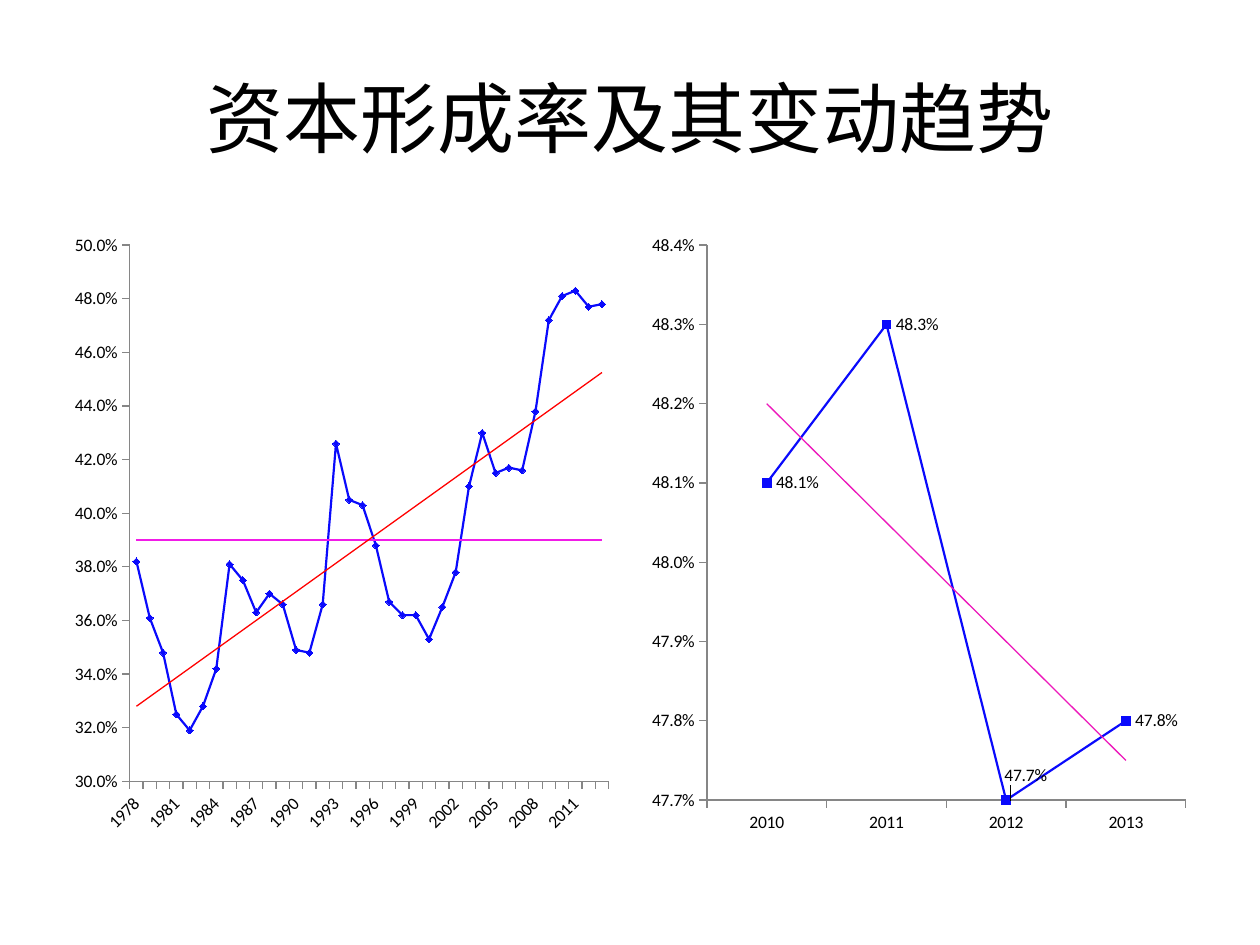
import pptx
import pptx.chart.data
import pptx.dml.color
import pptx.enum.chart
import pptx.enum.text
import pptx.oxml
import pptx.oxml.ns
import pptx.util

BLACK = pptx.dml.color.RGBColor(0x00, 0x00, 0x00)
GRAY = pptx.dml.color.RGBColor(0x86, 0x86, 0x86)
BLUE = pptx.dml.color.RGBColor(0x0A, 0x0A, 0xFC)
MAGENTA = pptx.dml.color.RGBColor(0xF1, 0x1B, 0xE7)
RED = pptx.dml.color.RGBColor(0xFF, 0x00, 0x00)
PINK = pptx.dml.color.RGBColor(0xED, 0x19, 0xBB)

FONT = "Calibri"
PERCENT = "0.0%"
MARGIN = 0.05
GUTTER = 0.016
CHART_TOP, CHART_HEIGHT = 0.233, 0.66
MARKERS = pptx.enum.chart.XL_MARKER_STYLE

FIRST_YEAR = 1978
RATES = [
    0.382, 0.361, 0.348, 0.325, 0.319, 0.328, 0.342, 0.381, 0.375,
    0.363, 0.370, 0.366, 0.349, 0.348, 0.366, 0.426, 0.405, 0.403,
    0.388, 0.367, 0.362, 0.362, 0.353, 0.365, 0.378, 0.410, 0.430,
    0.415, 0.417, 0.416, 0.438, 0.472, 0.481, 0.483, 0.477, 0.478,
]
AVERAGE = 0.39
RECENT_COUNT = 4


def xml_element(markup):
    """Parse chart markup written with the c and a prefixes."""
    tag, rest = markup.split(">", 1)
    return pptx.oxml.parse_xml(f"{tag} {pptx.oxml.ns.nsdecls('c', 'a')}>{rest}")


def manual_layout(left, top, width=None, height=None):
    """Return a layout element in shares of the chart's size."""
    parts = f'<c:x val="{left}"/><c:y val="{top}"/>'
    if width:
        parts = (
            '<c:layoutTarget val="inner"/><c:xMode val="edge"/><c:yMode val="edge"/>'
            f'{parts}<c:w val="{width}"/><c:h val="{height}"/>'
        )
    return xml_element(f"<c:layout><c:manualLayout>{parts}</c:manualLayout></c:layout>")


def add_title(slide, text):
    """Fill the title placeholder."""
    paragraph = slide.shapes.title.text_frame.paragraphs[0]
    paragraph.text = text
    paragraph.alignment = pptx.enum.text.PP_ALIGN.CENTER
    font = paragraph.runs[0].font
    font.name, font.size = FONT, pptx.util.Pt(44)
    font.color.rgb = BLACK


def format_axis(axis):
    """Give an axis a thin gray line with outside ticks and no grid."""
    axis.has_major_gridlines = False
    axis.major_tick_mark = pptx.enum.chart.XL_TICK_MARK.OUTSIDE
    axis.minor_tick_mark = pptx.enum.chart.XL_TICK_MARK.NONE
    axis.format.line.color.rgb = GRAY
    axis.format.line.width = pptx.util.Pt(0.75)


def add_line_chart(presentation, slide, column, years, series_values, scale, plot_height):
    """Add a line chart in one of two columns."""
    data = pptx.chart.data.CategoryChartData(number_format=PERCENT)
    data.categories = [str(year) for year in years]
    for number, values in enumerate(series_values, 1):
        data.add_series(f"Series {number}", values)
    share = (1 - 2 * MARGIN - GUTTER) / 2
    width, height = presentation.slide_width, presentation.slide_height
    chart = slide.shapes.add_chart(
        pptx.enum.chart.XL_CHART_TYPE.LINE_MARKERS,
        int(width * (MARGIN + column * (share + GUTTER))),
        int(height * CHART_TOP),
        int(width * share),
        int(height * CHART_HEIGHT),
        data,
    ).chart
    chart.has_legend = False
    chart.has_title = False
    chart.font.name, chart.font.size = FONT, pptx.util.Pt(10)
    chart.font.color.rgb = BLACK
    chart.plots[0].vary_by_categories = False
    format_axis(chart.category_axis)
    axis = chart.value_axis
    format_axis(axis)
    axis.minimum_scale, axis.maximum_scale, axis.major_unit = scale
    axis.tick_labels.number_format = PERCENT
    axis.tick_labels.number_format_is_linked = False
    plot_area = chart.plots[0]._element.getparent()
    for layout in plot_area.findall(pptx.oxml.ns.qn("c:layout")):
        plot_area.remove(layout)
    plot_area.insert(0, manual_layout(0.12, 0.04, 0.86, plot_height))
    return chart


def format_series(series, color, marker, marker_size=None):
    """Colour a series line and its markers."""
    series.smooth = False
    series.format.line.color.rgb = color
    series.format.line.width = pptx.util.Pt(1.25)
    series.marker.style = marker
    if marker_size:
        series.marker.size = marker_size
        series.marker.format.fill.solid()
        series.marker.format.fill.fore_color.rgb = color
        series.marker.format.line.color.rgb = color


def add_trend_line(series, color):
    """Add a linear trend line to a series."""
    trend = xml_element(
        '<c:trendline><c:spPr><a:ln w="9525"><a:solidFill>'
        f'<a:srgbClr val="{color}"/></a:solidFill></a:ln></c:spPr>'
        '<c:trendlineType val="linear"/><c:dispRSqr val="0"/><c:dispEq val="0"/>'
        "</c:trendline>"
    )
    series._element.find(pptx.oxml.ns.qn("c:cat")).addprevious(trend)


def slant_year_labels(axis, interval):
    """Turn the year labels by 45 degrees and show one per interval."""
    axis.tick_labels.font.size = pptx.util.Pt(10)
    element = axis._element
    element.find(".//" + pptx.oxml.ns.qn("a:bodyPr")).set("rot", "-2700000")
    last = element.find(pptx.oxml.ns.qn("c:noMultiLvlLbl"))
    for tag, step in (("tickLblSkip", interval), ("tickMarkSkip", 1)):
        last.addprevious(xml_element(f'<c:{tag}><!-- --></c:{tag}>'))
        last.getprevious().set("val", str(step))


def label_values(series, raised_point):
    """Show values to the right, with one point's label raised."""
    positions = pptx.enum.chart.XL_LABEL_POSITION
    labels = series.data_labels
    labels.show_value = True
    labels.number_format = PERCENT
    labels.number_format_is_linked = False
    labels.position = positions.RIGHT
    series.points[raised_point].data_label.position = positions.RIGHT
    label = labels._element.find(pptx.oxml.ns.qn("c:dLbl"))
    label.find(pptx.oxml.ns.qn("c:idx")).addnext(manual_layout(-0.02, -0.04))


def main():
    """Build the slide with its title and two charts."""
    presentation = pptx.Presentation()
    presentation.slide_width = pptx.util.Inches(10)
    presentation.slide_height = pptx.util.Inches(7.5)
    slide = presentation.slides.add_slide(presentation.slide_layouts[5])
    add_title(slide, "资本形成率及其变动趋势")

    years = range(FIRST_YEAR, FIRST_YEAR + len(RATES))
    averages = [AVERAGE] * len(RATES)
    history = add_line_chart(
        presentation, slide, 0, years, [RATES, averages], (0.3, 0.5, 0.02), 0.86
    )
    rates, average = history.plots[0].series
    format_series(rates, BLUE, MARKERS.DIAMOND, 4)
    add_trend_line(rates, RED)
    format_series(average, MAGENTA, MARKERS.NONE)
    slant_year_labels(history.category_axis, 3)

    recent = add_line_chart(
        presentation, slide, 1, years[-RECENT_COUNT:], [RATES[-RECENT_COUNT:]],
        (0.477, 0.484, 0.001), 0.89,
    )
    recent_rates = recent.plots[0].series[0]
    format_series(recent_rates, BLUE, MARKERS.SQUARE, 5)
    add_trend_line(recent_rates, PINK)
    label_values(recent_rates, 2)
    presentation.save("out.pptx")


if __name__ == "__main__":
    main()
